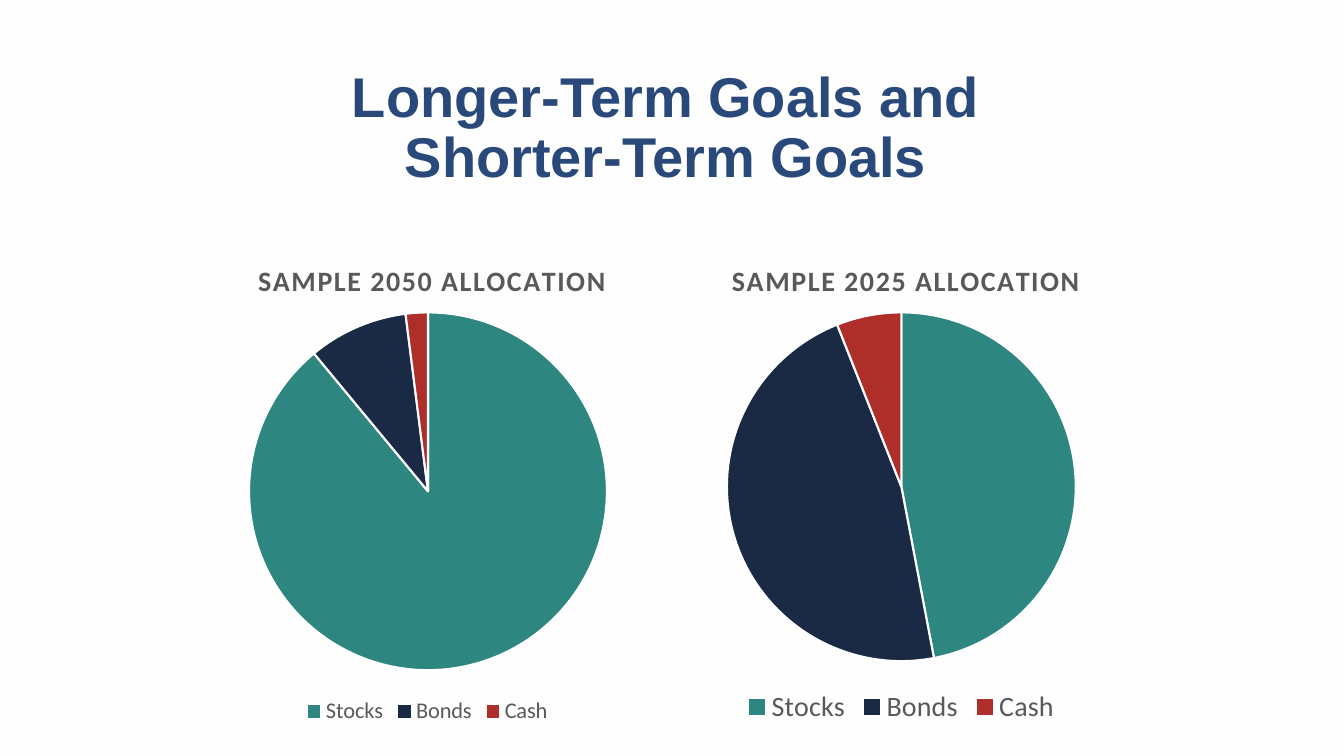
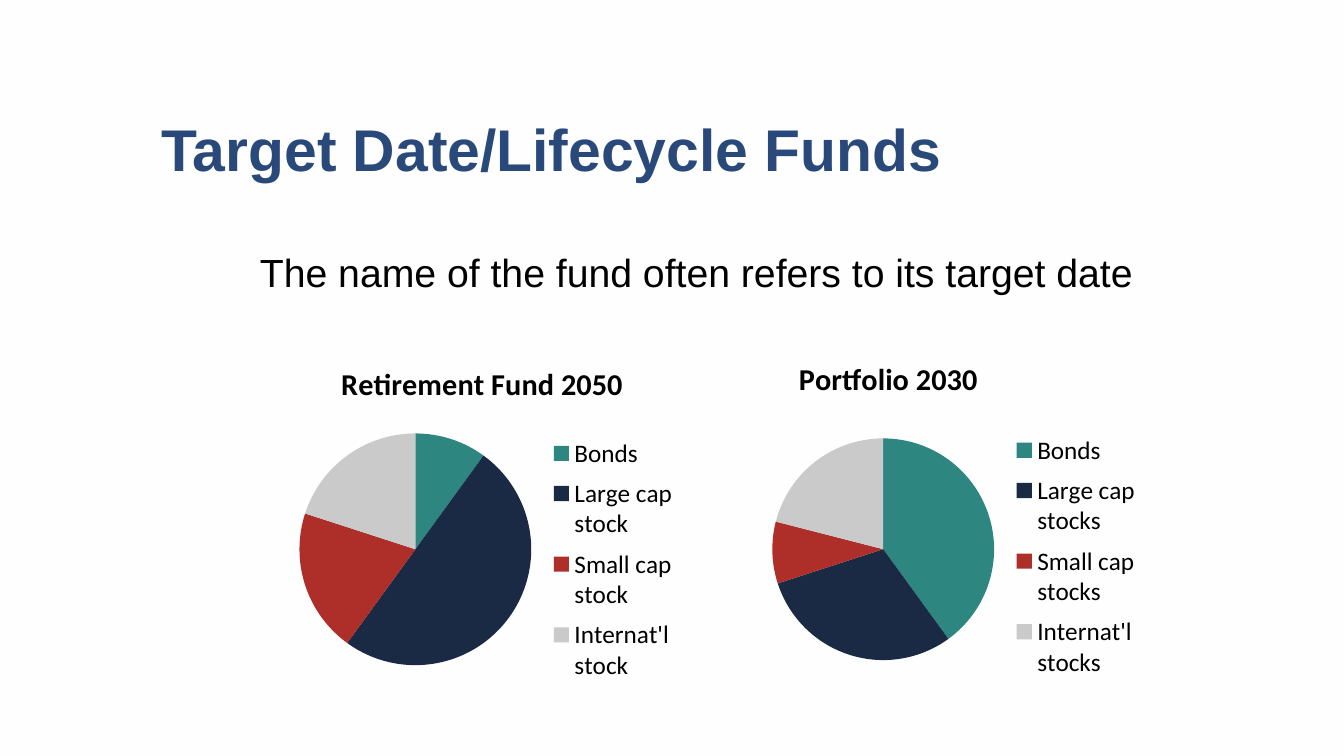
import pptx
import pptx.chart.data
import pptx.dml.color
import pptx.enum.chart
import pptx.enum.text
import pptx.oxml
import pptx.oxml.ns
import pptx.util

Inches = pptx.util.Inches
Pt = pptx.util.Pt
Align = pptx.enum.text.PP_ALIGN
Anchor = pptx.enum.text.MSO_ANCHOR
Legend = pptx.enum.chart.XL_LEGEND_POSITION
qn = pptx.oxml.ns.qn

PAPER, NAVY, BLACK, GREY, WHITE = "FFFEFE", "29497A", "000000", "595959", "FFFFFF"
SLICES = ["2E8680", "1A2A45", "AE2E2A", "CACACA"]


def tint(hue):
    return pptx.dml.color.RGBColor.from_string(hue)


def style(font, size, hue, face="Calibri", bold=False):
    font.size = Pt(size)
    font.color.rgb = tint(hue)
    font.name = face
    font.bold = bold


def write(shape, text, box, size, hue=BLACK, bold=False, align=Align.LEFT, anchor=Anchor.TOP):
    shape.left, shape.top, shape.width, shape.height = map(Inches, box)
    frame = shape.text_frame
    frame.word_wrap = True
    frame.auto_size = pptx.enum.text.MSO_AUTO_SIZE.NONE
    frame.vertical_anchor = anchor
    frame.text = text
    para = frame.paragraphs[0]
    para.alignment = align
    para.line_spacing = 0.9
    para.space_before = Pt(0)
    props = para._p.get_or_add_pPr()
    props.set("marL", "0")
    props.set("indent", "0")
    props.append(props.makeelement(qn("a:buNone"), {}))
    style(para.font, size, hue, "Arial", bold)


def head(slide, text, box, size, align=Align.LEFT):
    write(slide.shapes.title, text, box, size, NAVY, True, align, Anchor.MIDDLE)


def place(node, index, frame, spot, inner=False):
    for old in node.findall(qn("c:layout")):
        node.remove(old)
    left, top, width, height = frame
    shares = [(spot[0] - left) / width, (spot[1] - top) / height]
    shares += [size / whole for size, whole in zip(spot[2:], (width, height))]
    parts = [("layoutTarget", "inner")] if inner else []
    parts += [("xMode", "edge"), ("yMode", "edge")]
    parts += [(key, f"{share:.4f}") for key, share in zip("xywh", shares)]
    marks = "".join(f'<c:{key} val="{val}"/>' for key, val in parts)
    space = pptx.oxml.ns.nsdecls("c")
    node.insert(index, pptx.oxml.parse_xml(
        f"<c:layout {space}><c:manualLayout>{marks}</c:manualLayout></c:layout>"))


def title(chart, text, frame, spot, size, hue, gap):
    chart.has_title = True
    chart.chart_title.include_in_layout = False
    para = chart.chart_title.text_frame.paragraphs[0]
    run = para.add_run()
    run.text = text
    style(run.font, size, hue, bold=True)
    run.font._element.set("spc", str(gap))
    place(chart.chart_title._element, 1, frame, spot)


def key(chart, frame, side, size, hue, spot):
    chart.has_legend = True
    chart.legend.position = side
    chart.legend.include_in_layout = False
    style(chart.legend.font, size, hue)
    if spot:
        place(chart.legend._element, 1, frame, spot)


def pie(slide, name, cats, vals, frame, disc, spot, size=21.6, hue=BLACK, gap=0,
        side=Legend.RIGHT, small=18, rim=None, series=None, box=None):
    data = pptx.chart.data.CategoryChartData()
    data.categories = cats
    data.add_series(series or name, vals)
    kind = pptx.enum.chart.XL_CHART_TYPE.PIE
    chart = slide.shapes.add_chart(kind, *map(Inches, frame), data).chart
    style(chart.font, small, BLACK)
    title(chart, name, frame, spot, size, hue, gap)
    key(chart, frame, side, small, hue, box)
    plot = chart.plots[0]
    plot.vary_by_categories = True
    for index in range(len(cats)):
        form = plot.series[0].points[index].format
        form.fill.solid()
        form.fill.fore_color.rgb = tint(SLICES[index])
        if rim:
            form.line.color.rgb = tint(rim)
            form.line.width = Pt(1.5)
        else:
            form.line.fill.background()
    area = chart._chartSpace.chart.plotArea
    left, top, width = disc
    place(area, 0, frame, (left, top, width, width), True)


def goals(deck):
    slide = deck.slides.add_slide(deck.slide_layouts[5])
    head(slide, "Longer-Term Goals and Shorter-Term Goals",
         (2.37, 0.56, 8.46, 1.45), 40, Align.CENTER)
    wide = 4.7
    rows = [("2050", (89, 9, 2), (2.47, 3.1, 3.55), 16),
            ("2025", (47, 47, 6), (7.21, 3.1, 3.46), 20)]
    for index, (year, vals, disc, small) in enumerate(rows):
        left = 1.89 + index * wide
        pie(slide, f"SAMPLE {year} ALLOCATION", ["Stocks", "Bonds", "Cash"], vals,
            (left, 2.3, wide, 4.94), disc, (left + 0.62, 2.54), size=20, hue=GREY,
            gap=100, side=Legend.BOTTOM, small=small, rim=WHITE, series="Series 1")


def funds(deck):
    slide = deck.slides.add_slide(deck.slide_layouts[1])
    head(slide, "Target Date/Lifecycle Funds", (1.5, 0.79, 10.92, 1.45), 42)
    write(slide.placeholders[1], "The name of the fund often refers to its target date ",
          (1.5, 2.47, 10.92, 4.77), 28, align=Align.CENTER)
    rows = [("Portfolio 2030", "stocks", (40, 30, 9, 21), (7.52, 2.98, 3.9, 4.26),
             (7.66, 4.35, 2.2), (7.87, 3.49), (9.97, 4.22, 1.4, 2.6)),
            ("Retirement Fund 2050", "stock", (10, 50, 20, 20), (2.83, 3.24, 4, 3.72),
             (2.97, 4.3, 2.3), (3.33, 3.54), (5.38, 4.25, 1.4, 2.6))]
    for name, word, vals, frame, disc, spot, box in rows:
        cats = ["Bonds"] + [f"{sort} {word}" for sort in ("Large cap", "Small cap", "Internat'l")]
        pie(slide, name, cats, vals, frame, disc, spot, box=box)


def main():
    deck = pptx.Presentation()
    deck.slide_width, deck.slide_height = Inches(13.33), Inches(7.5)
    fill = deck.slide_master.background.fill
    fill.solid()
    fill.fore_color.rgb = tint(PAPER)
    goals(deck)
    funds(deck)
    deck.save("out.pptx")


if __name__ == "__main__":
    main()
